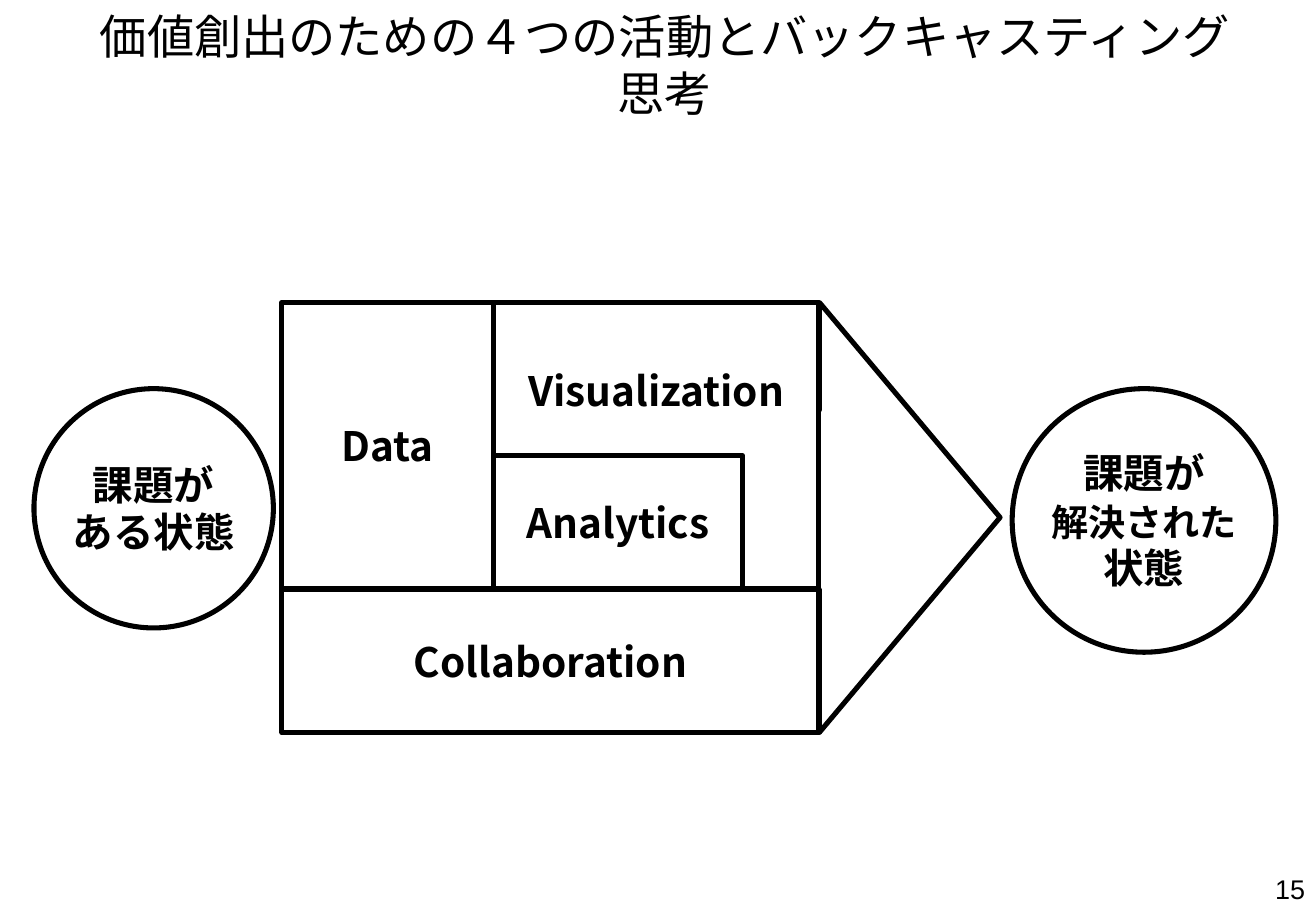
import pptx
import pptx.util
import pptx.dml.color
import pptx.enum.lang
import pptx.enum.shapes
import pptx.enum.text
import pptx.oxml.ns
import lxml.etree

PX = 9144
KIND = pptx.enum.shapes.MSO_SHAPE
ALIGN = pptx.enum.text.PP_ALIGN
ANCHOR = pptx.enum.text.MSO_ANCHOR
THEME = {
    "ink": pptx.dml.color.RGBColor(0, 0, 0),
    "paper": pptx.dml.color.RGBColor(255, 255, 255),
    "line": 3,
    "title": 28,
    "label": 24,
    "small": 22,
    "number": 16,
    "head": "Montserrat",
    "body": "Noto Sans CJK JP",
    "plain": "Arial",
}


def write(shape, text, sizes=("label",), font="body", bold=True, align=ALIGN.CENTER,
          anchor=ANCHOR.MIDDLE, side=0, foot=5, pitch=None, indent=0):
    frame = shape.text_frame
    frame.word_wrap = True
    frame.auto_size = pptx.enum.text.MSO_AUTO_SIZE.NONE
    frame.vertical_anchor = anchor
    frame.margin_left = frame.margin_right = side * PX
    frame.margin_top, frame.margin_bottom = 5 * PX, foot * PX
    for i, line in enumerate(text.split("\n")):
        para = frame.paragraphs[0] if i == 0 else frame.add_paragraph()
        para.alignment = align
        if pitch:
            para.line_spacing = pptx.util.Pt(pitch)
        if indent:
            para._p.get_or_add_pPr().set("marL", str(indent * PX))
        run = para.add_run()
        run.text = line
        run.font.size = pptx.util.Pt(THEME[sizes[i % len(sizes)]])
        run.font.bold = bold
        run.font.color.rgb = THEME["ink"]
        run.font.name = THEME[font]
        run.font.language_id = pptx.enum.lang.MSO_LANGUAGE_ID.JAPANESE
        east = lxml.etree.SubElement(run._r.get_or_add_rPr(), pptx.oxml.ns.qn("a:ea"))
        east.set("typeface", THEME[font])


def draw(kind, box, fill=True):
    shape = slide.shapes.add_shape(kind, *[n * PX for n in box])
    shape.shadow.inherit = False
    if fill:
        shape.fill.solid()
        shape.fill.fore_color.rgb = THEME["paper"]
    else:
        shape.fill.background()
    shape.line.color.rgb = THEME["ink"]
    shape.line.width = pptx.util.Pt(THEME["line"])
    return shape


deck = pptx.Presentation()
deck.slide_width, deck.slide_height = 1083 * PX, 750 * PX
slide = deck.slides.add_slide(deck.slide_layouts[5])

title = slide.shapes.title
title.left, title.top, title.width, title.height = [n * PX for n in (54, 29, 975, 47)]
write(title, "価値創出のための４つの活動とバックキャスティング思考",
      sizes=("title",), font="head", bold=False, side=10, indent=11)

left, top, split, right, floor, base = 232, 249, 406, 674, 485, 603
arrow = draw(KIND.RIGHT_ARROW, (left, top, 591, base - top))
arrow.adjustments[0] = 0.5
arrow.adjustments[1] = 0.42

parts = [
    ("Visualization", split, top, right, floor, 97),
    ("Data", left, top, split, floor, 5),
    ("Analytics", split, 375, 611, floor, 5),
    ("Collaboration", left, floor, right, base, 5),
]
for text, x, y, end, low, foot in parts:
    write(draw(KIND.RECTANGLE, (x, y, end - x, low - y)), text, foot=foot)

start = draw(KIND.OVAL, (28, 320, 197, 197), fill=False)
write(start, "課題が\nある状態", pitch=28)
goal = draw(KIND.OVAL, (833, 320, 217, 217))
write(goal, "課題が\n解決された\n状態", sizes=("label", "small", "label"), pitch=28)

number = slide.shapes.add_textbox(*[n * PX for n in (858, 700, 226, 50)])
write(number, "15", sizes=("number",), font="plain", bold=False,
      align=ALIGN.RIGHT, anchor=ANCHOR.BOTTOM, side=10)

deck.save("out.pptx")
